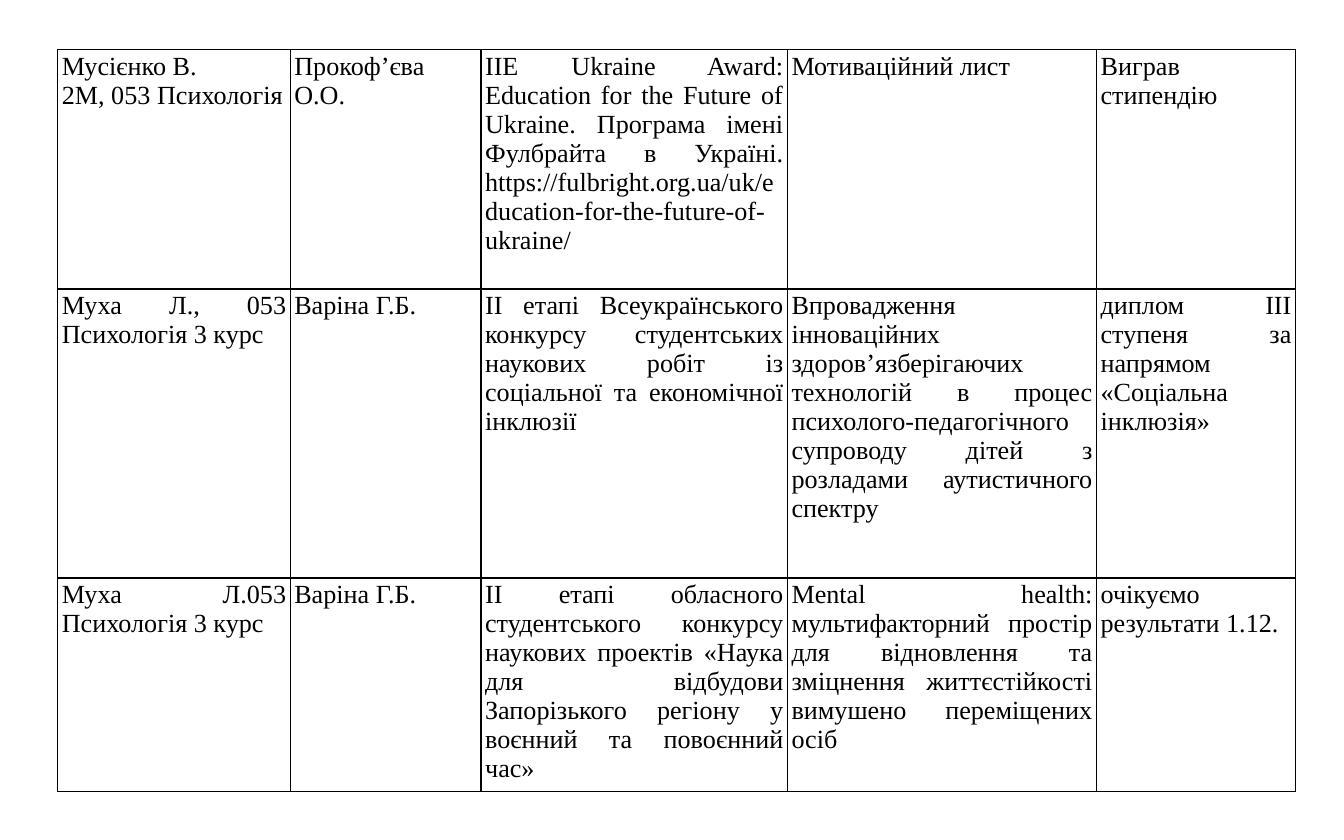
from dataclasses import dataclass

from lxml.etree import SubElement
from pptx import Presentation
from pptx.dml.color import RGBColor
from pptx.enum.text import MSO_ANCHOR, PP_ALIGN
from pptx.oxml.ns import qn
from pptx.util import Inches, Pt


@dataclass(frozen=True)
class Theme:
    ink: str = "000000"
    paper: str = "FFFFFF"
    font: str = "Times New Roman"
    size: float = 14
    border: float = 0.75


THEME = Theme()
TABLE_BOX = (0.43, 0.37, 9.21, 5.52)
COLUMN_WIDTHS = (1.73, 1.42, 2.28, 2.3, 1.48)
ROW_HEIGHTS = (1.78, 2.15, 1.59)
CELL_FORMAT = {
    "margin_left": Inches(0.03),
    "margin_right": Inches(0.03),
    "margin_top": Inches(0.02),
    "margin_bottom": Inches(0.02),
    "vertical_anchor": MSO_ANCHOR.TOP,
}
FONT_FORMAT = {"name": THEME.font, "size": Pt(THEME.size), "bold": False}

# Each row: student, supervisor, competition, work, result
ENTRIES = (
    (
        "Мусієнко В.\n2М, 053 Психологія",
        "Прокоф’єва О.О.",
        "IIE Ukraine Award: Education for the Future of Ukraine. "
        "Програма iменi Фулбрайта в Українi. "
        "https://fulbright.org.ua/uk/education-for-the-future-of-ukraine/",
        "Мотиваційний лист",
        "Виграв стипендію",
    ),
    (
        "Муха Л., 053 Психологія 3 курс",
        "Варіна Г.Б.",
        "ІІ етапі Всеукраїнського конкурсу студентських наукових робіт "
        "із соціальної та економічної інклюзії",
        "Впровадження інноваційних здоров’язберігаючих технологій в процес "
        "психолого-педагогічного супроводу дітей з розладами "
        "аутистичного спектру",
        "диплом ІІІ ступеня за напрямом «Соціальна інклюзія»",
    ),
    (
        "Муха Л.053 Психологія 3 курс",
        "Варіна Г.Б.",
        "ІІ етапі обласного студентського конкурсу наукових проектів "
        "«Наука для відбудови Запорізького регіону у воєнний "
        "та повоєнний час»",
        "Mental health: мультифакторний простір для відновлення "
        "та зміцнення життєстійкості вимушено переміщених осіб",
        "очікуємо результати 1.12.",
    ),
)


def add_borders(cell):
    properties = cell._tc.get_or_add_tcPr()
    for position, side in enumerate(("lnL", "lnR", "lnT", "lnB")):
        line = SubElement(properties, qn(f"a:{side}"), w=str(Pt(THEME.border)))
        fill = SubElement(line, qn("a:solidFill"))
        SubElement(fill, qn("a:srgbClr"), val=THEME.ink)
        properties.insert(position, line)  # borders come before the fill


def fill_cell(cell, text):
    for name, value in CELL_FORMAT.items():
        setattr(cell, name, value)
    cell.fill.solid()
    cell.fill.fore_color.rgb = RGBColor.from_string(THEME.paper)
    add_borders(cell)
    cell.text_frame.text = text
    for para in cell.text_frame.paragraphs:
        para.alignment = PP_ALIGN.JUSTIFY
        for span in para.runs:
            for name, value in FONT_FORMAT.items():
                setattr(span.font, name, value)
            span.font.color.rgb = RGBColor.from_string(THEME.ink)


def add_results_table(page, box):
    frame = page.shapes.add_table(
        len(ENTRIES), len(COLUMN_WIDTHS), *map(Inches, box)
    )
    table = frame.table
    table.first_row = table.horz_banding = False
    _, _, box_width, box_height = box
    for column, width in zip(table.columns, COLUMN_WIDTHS):
        column.width = Inches(box_width * width / sum(COLUMN_WIDTHS))
    for row, height, entry in zip(table.rows, ROW_HEIGHTS, ENTRIES):
        row.height = Inches(box_height * height / sum(ROW_HEIGHTS))
        for cell, text in zip(row.cells, entry):
            fill_cell(cell, text)


def main():
    deck = Presentation()
    deck.slide_width, deck.slide_height = Inches(10), Inches(6.25)
    page = deck.slides.add_slide(deck.slide_layouts[6])
    add_results_table(page, TABLE_BOX)
    deck.save("out.pptx")


if __name__ == "__main__":
    main()
